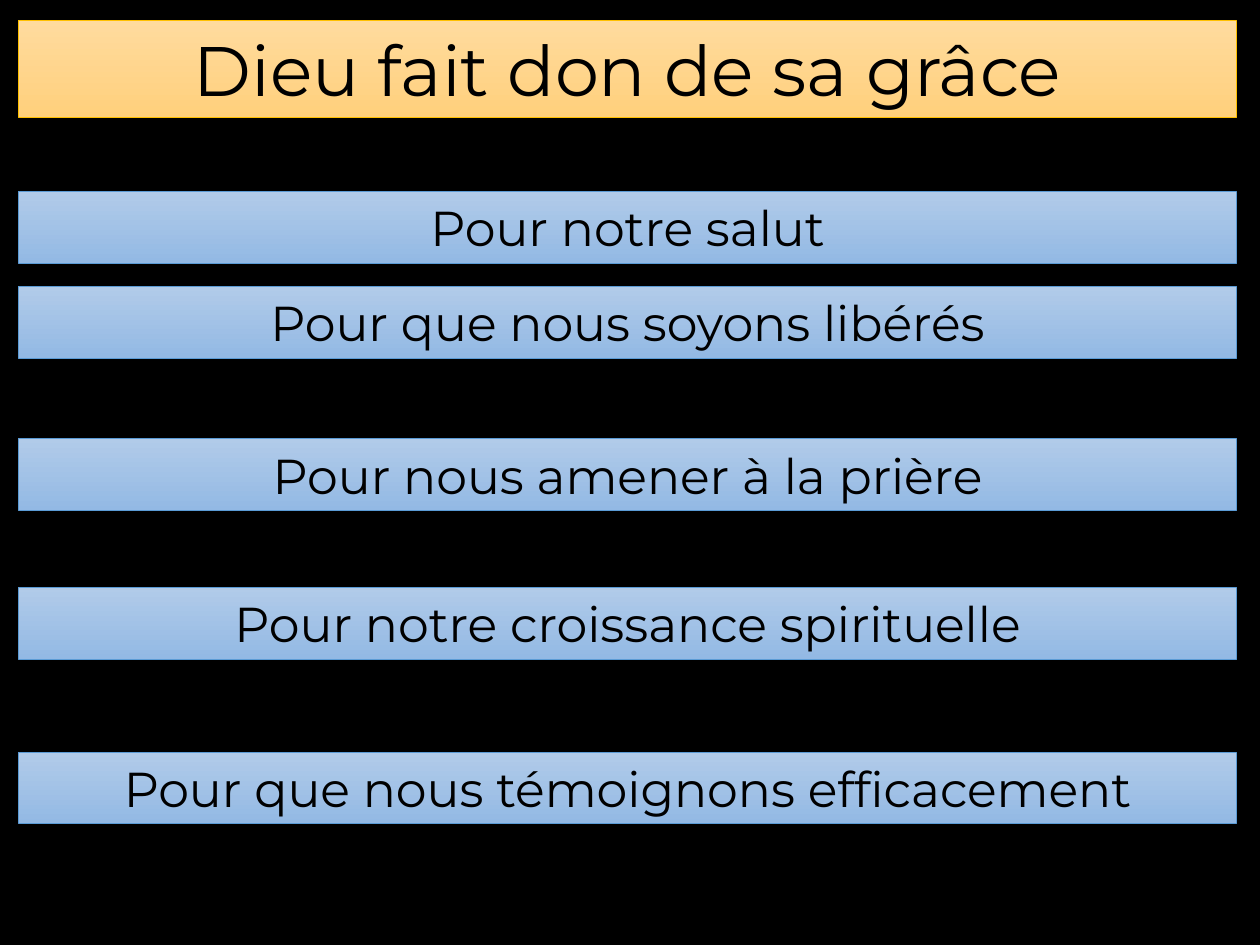
"""Build the slide on the gift of grace: a title banner above five purposes."""
from dataclasses import dataclass

import pptx
import pptx.dml.color
import pptx.enum.shapes
import pptx.enum.text
import pptx.slide
import pptx.util

Cm = pptx.util.Cm
Pt = pptx.util.Pt
RGBColor = pptx.dml.color.RGBColor

BLACK = RGBColor(0x00, 0x00, 0x00)
GOLD_LIGHT = RGBColor(0xFF, 0xDB, 0x9E)
GOLD_DARK = RGBColor(0xFF, 0xD0, 0x7C)
GOLD_LINE = RGBColor(0xFF, 0xC0, 0x00)
BLUE_LIGHT = RGBColor(0xB1, 0xCB, 0xE9)
BLUE_DARK = RGBColor(0x93, 0xB9, 0xE4)
BLUE_LINE = RGBColor(0x5B, 0x9B, 0xD5)

FONT = "Montserrat"
LEFT = Cm(0.38)
WIDTH = Cm(24.54)


@dataclass(frozen=True)
class Style:
    height: pptx.util.Length
    size: pptx.util.Length
    top_color: RGBColor
    bottom_color: RGBColor
    line_color: RGBColor


@dataclass(frozen=True)
class Banner:
    text: str
    top: pptx.util.Length
    style: Style


TITLE = Style(Cm(1.96), Pt(40), GOLD_LIGHT, GOLD_DARK, GOLD_LINE)
PURPOSE = Style(Cm(1.45), Pt(28), BLUE_LIGHT, BLUE_DARK, BLUE_LINE)

BANNERS = (
    Banner("Dieu fait don de sa grâce", Cm(0.41), TITLE),
    Banner("Pour notre salut", Cm(3.86), PURPOSE),
    Banner("Pour que nous soyons libérés", Cm(5.77), PURPOSE),
    Banner("Pour nous amener à la prière", Cm(8.84), PURPOSE),
    Banner("Pour notre croissance spirituelle", Cm(11.84), PURPOSE),
    Banner("Pour que nous témoignons efficacement", Cm(15.16), PURPOSE),
)


def draw_banner(page: pptx.slide.Slide, banner: Banner) -> None:
    style = banner.style
    box = page.shapes.add_shape(
        pptx.enum.shapes.MSO_SHAPE.RECTANGLE, LEFT, banner.top, WIDTH, style.height
    )
    box.shadow.inherit = False
    box.fill.gradient()
    box.fill.gradient_angle = 270
    for stop, color in zip(box.fill.gradient_stops, (style.top_color, style.bottom_color)):
        stop.color.rgb = color
    box.line.color.rgb = style.line_color
    box.line.width = Pt(0.5)

    frame = box.text_frame
    frame.word_wrap = True
    frame.auto_size = pptx.enum.text.MSO_AUTO_SIZE.SHAPE_TO_FIT_TEXT
    para = frame.paragraphs[0]
    para.alignment = pptx.enum.text.PP_ALIGN.CENTER
    span = para.add_run()
    span.text = banner.text
    span.font.name = FONT
    span.font.size = style.size
    span.font.color.rgb = BLACK


def main() -> None:
    deck = pptx.Presentation()
    deck.slide_width = Cm(25.4)
    deck.slide_height = Cm(19.05)
    page = deck.slides.add_slide(deck.slide_layouts[6])
    page.background.fill.solid()
    page.background.fill.fore_color.rgb = BLACK
    for banner in BANNERS:
        draw_banner(page, banner)
    deck.save("out.pptx")


if __name__ == "__main__":
    main()
